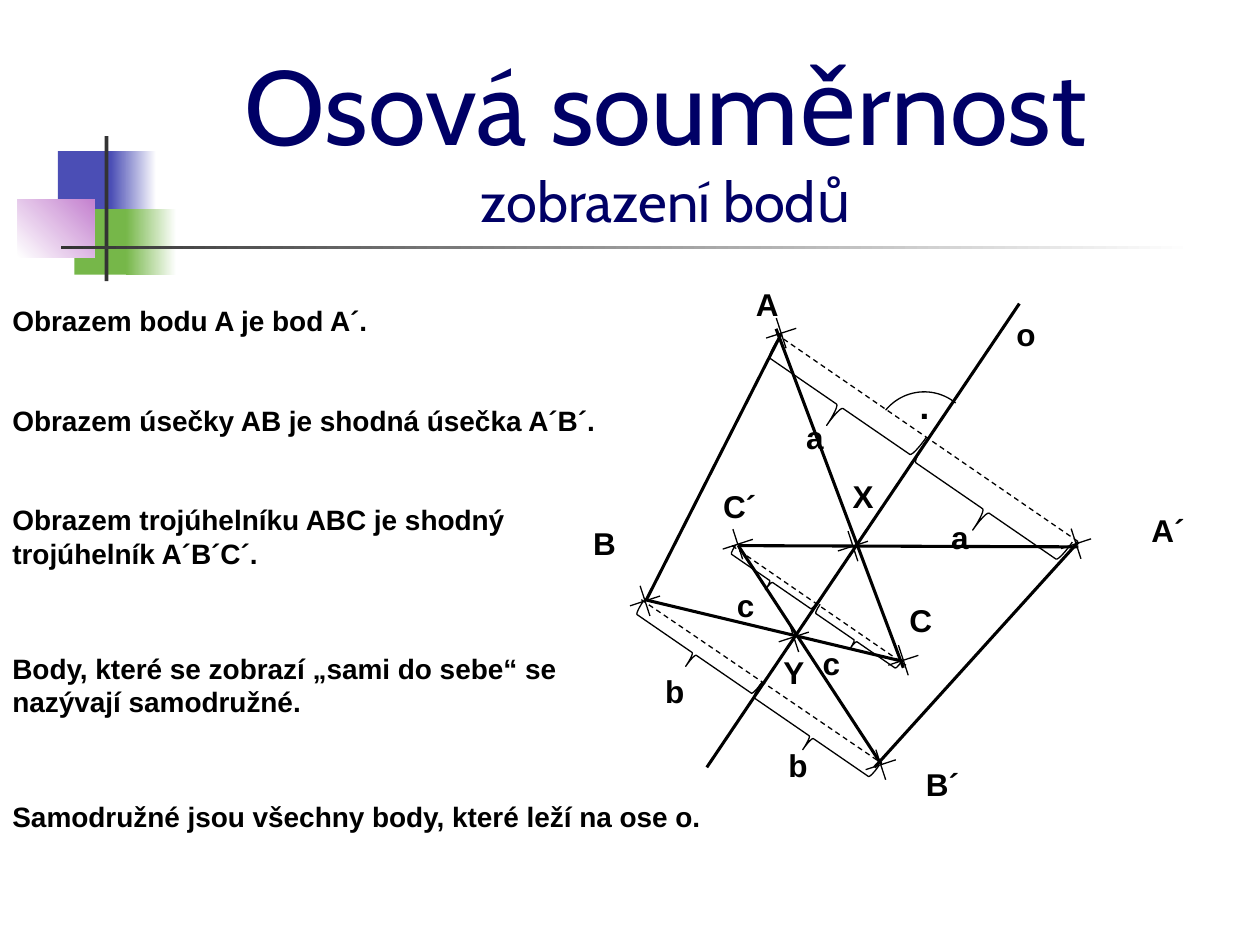
import pptx
import pptx.util
import pptx.dml.color
import pptx.enum.dml
import pptx.enum.shapes
import pptx.enum.text
import pptx.oxml.ns
import lxml.etree

Pt = pptx.util.Pt
SHAPES = pptx.enum.shapes.MSO_SHAPE
COLORS = {
    "blue": "4B4EB5", "green": "76B749", "pink": "C481CF",
    "dark": "333333", "white": "FFFFFF", "title": "000066", "ink": "000000",
}
THIN, THICK = 0.75, 1.75
BRACE_ANGLE = 304.5  # braces run parallel to the dashed lines

# Decoration: left, top, width, height, colours, gradient angle
DECORATION = [
    (33.1, 86.4, 34.6, 37.4, ["blue"], 0),
    (63.4, 86.4, 25.9, 37.4, ["blue", "white"], 0),
    (42.5, 119.5, 33.1, 37.4, ["green"], 0),
    (72, 119.5, 28.8, 37.4, ["green", "white"], 0),
    (10.1, 113.8, 43.9, 33.1, ["white", "pink"], 45),
    (59.8, 77.8, 2.2, 82.8, ["dark"], 0),
    (34.6, 140.4, 648, 2.2, ["dark", "white"], 0),
]

# Statements: top, width, height, text
STATEMENTS = [
    (169.9, 270.7, 26.6, "Obrazem bodu A je bod A´."),
    (226.8, 370.1, 26.6, "Obrazem úsečky AB je shodná úsečka A´B´."),
    (283.7, 370.1, 46.1, "Obrazem trojúhelníku ABC je shodný trojúhelník A´B´C´."),
    (368.6, 370.1, 46.1, "Body, které se zobrazí „sami do sebe“ se nazývají samodružné."),
    (453.6, 411.8, 26.6, "Samodružné jsou všechny body, které leží na ose o."),
]

# Axis first, then the sides of both triangles
SOLID_LINES = [
    (582.5, 173.5, 403.9, 438.5),
    (369.4, 342.7, 446.4, 190.8),
    (499.7, 438.5, 616.3, 309.6),
    (443.5, 187.9, 516.2, 381.6),
    (368.6, 342.7, 516.2, 378),
    (421.9, 311.8, 616.3, 312.5),
    (421.9, 311.8, 503.3, 436.3),
]
DASHED_LINES = [
    (443.5, 190.8, 616.3, 309.6),
    (366.5, 342.7, 504, 436.3),
    (418.3, 311.8, 517.7, 380.2),
]

# Centres of the crosses at A, A´, C´, B, B´, C, X, Y
POINTS = [
    (446.4, 190.4), (614.9, 310.7), (421.6, 311), (368.6, 343.4),
    (503.3, 437), (516.2, 377.3), (487.4, 312.1), (453.6, 364),
]

# Braces: width, height, and the two left-top corners
BRACES = [
    (26.6, 101.5, [(466.6, 181.4), (550.1, 241.2)]),
    (17.3, 82.1, [(388.1, 332.6), (455, 380.2)]),
    (11.5, 56.9, [(483.1, 337.7), (434.9, 303.8)]),
]

LABELS = [
    ("a", 536.4, 292.3), ("a", 453.6, 235.4), ("A", 424.8, 159.1),
    ("A´", 650.9, 288.7), ("o", 573.8, 176.4), ("B", 331.9, 295.9),
    ("B´", 522, 433.4), ("b", 373, 380.2), ("b", 443.5, 422.6),
    ("C", 512.6, 339.8), ("c", 414, 331.2), ("c", 463, 364.3),
    ("C´", 406.1, 275), ("X", 480.2, 269.3), ("Y", 440.6, 369.4),
]


def color(name):
    return pptx.dml.color.RGBColor.from_string(COLORS[name])


def add_block(slide, left, top, width, height, names, angle):
    block = slide.shapes.add_shape(SHAPES.RECTANGLE, Pt(left), Pt(top), Pt(width), Pt(height))
    block.shadow.inherit = False
    block.line.fill.background()
    if len(names) == 1:
        block.fill.solid()
        block.fill.fore_color.rgb = color(names[0])
        return
    block.fill.gradient()
    block.fill.gradient_angle = angle
    for stop, name, position in zip(block.fill.gradient_stops, names, (0, 1)):
        stop.color.rgb = color(name)
        stop.position = position


def add_outline(slide, kind, left, top, width, height, rotation):
    shape = slide.shapes.add_shape(kind, Pt(left), Pt(top), Pt(width), Pt(height))
    shape.shadow.inherit = False
    shape.fill.background()
    shape.line.color.rgb = color("ink")
    shape.line.width = Pt(THIN)
    shape.rotation = rotation


def add_line(slide, ends, width, dashed=False):
    line = slide.shapes.add_connector(
        pptx.enum.shapes.MSO_CONNECTOR.STRAIGHT, *[Pt(value) for value in ends])
    line.line.color.rgb = color("ink")
    line.line.width = Pt(width)
    if dashed:
        line.line.dash_style = pptx.enum.dml.MSO_LINE.DASH
    properties = line._element.spPr
    lxml.etree.SubElement(properties, pptx.oxml.ns.qn("a:effectLst"))


def add_cross(slide, x, y, short=2.8, long=8.6):
    add_line(slide, (x - short, y - long, x + short, y + long), THIN)
    add_line(slide, (x - long, y + short, x + long, y - short), THIN)


def add_span(para, text, size, font, name, bold):
    span = para.add_run()
    span.text = text
    span.font.size = Pt(size)
    span.font.name = font
    span.font.bold = bold
    span.font.color.rgb = color(name)


def add_text(slide, left, top, width, height, text, size):
    box = slide.shapes.add_textbox(Pt(left), Pt(top), Pt(width), Pt(height))
    box.text_frame.word_wrap = True
    box.text_frame.auto_size = pptx.enum.text.MSO_AUTO_SIZE.SHAPE_TO_FIT_TEXT
    add_span(box.text_frame.paragraphs[0], text, size, "Arial", "ink", True)


def add_title(slide):
    box = slide.shapes.add_textbox(Pt(55.4), Pt(20.9), Pt(650.2), Pt(115.2))
    frame = box.text_frame
    frame.word_wrap = True
    frame.vertical_anchor = pptx.enum.text.MSO_ANCHOR.MIDDLE
    paras = [frame.paragraphs[0], frame.add_paragraph()]
    lines = [("Osová souměrnost", 60), ("zobrazení bodů", 32)]
    for para, (text, size) in zip(paras, lines):
        para.alignment = pptx.enum.text.PP_ALIGN.CENTER
        add_span(para, text, size, "Cabin", "title", False)


def main():
    deck = pptx.Presentation()
    deck.slide_width, deck.slide_height = Pt(720), Pt(540)
    page = deck.slides.add_slide(deck.slide_layouts[6])

    # Decoration and title
    for block in DECORATION:
        add_block(page, *block)
    add_title(page)

    # Statements on the left
    for top, width, height, text in STATEMENTS:
        add_text(page, 0, top, width, height, text, 16)

    # Construction
    for ends in SOLID_LINES:
        add_line(page, ends, THICK)
    for ends in DASHED_LINES:
        add_line(page, ends, THIN, dashed=True)
    for x, y in POINTS:
        add_cross(page, x, y)
    for width, height, corners in BRACES:
        for left, top in corners:
            add_outline(page, SHAPES.LEFT_BRACE, left, top, width, height, BRACE_ANGLE)

    # Right angle mark and labels
    add_outline(page, SHAPES.ARC, 499.7, 223.9, 56.9, 56.9, 309.1)
    add_text(page, 518.4, 216, 17.3, 31.7, ".", 20)
    for text, left, top in LABELS:
        add_text(page, left, top, 38.2, 28.8, text, 18)

    deck.save("out.pptx")


if __name__ == "__main__":
    main()
